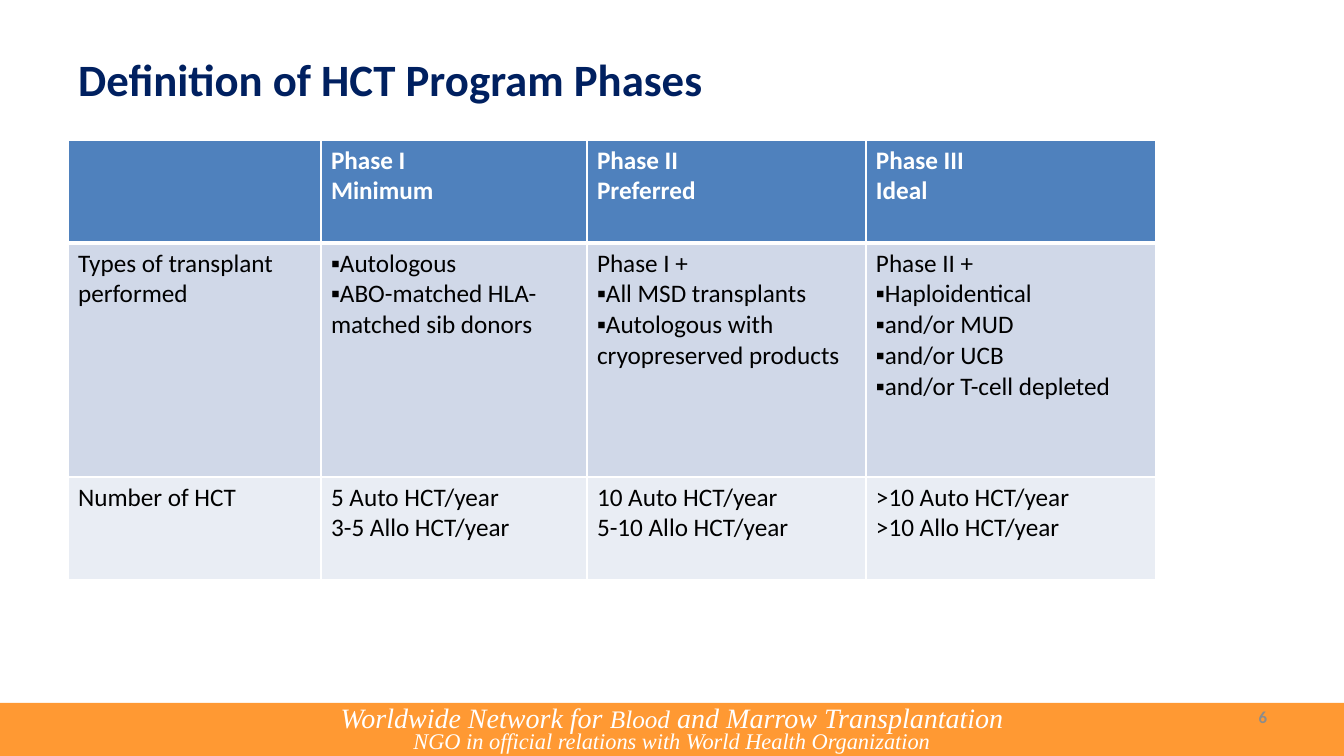
from lxml import etree
from pptx import Presentation
from pptx.dml.color import RGBColor
from pptx.enum.shapes import MSO_SHAPE
from pptx.enum.text import MSO_ANCHOR, PP_ALIGN
from pptx.oxml.ns import qn
from pptx.util import Pt

EMU_PER_PX = 914400 / 100.8
RECTANGLE = MSO_SHAPE.RECTANGLE
TOP, MIDDLE = MSO_ANCHOR.TOP, MSO_ANCHOR.MIDDLE
LEFT, CENTER, RIGHT = PP_ALIGN.LEFT, PP_ALIGN.CENTER, PP_ALIGN.RIGHT

WHITE = RGBColor(0xFF, 0xFF, 0xFF)
BLACK = RGBColor(0x00, 0x00, 0x00)
NAVY = RGBColor(0x00, 0x20, 0x60)
ORANGE = RGBColor(0xFF, 0x99, 0x33)
GRAY = RGBColor(0x8C, 0x8C, 0x8C)
HEADER_BLUE = RGBColor(0x4F, 0x81, 0xBD)
PALE_BLUE = RGBColor(0xD0, 0xD8, 0xE8)
LIGHT_BLUE = RGBColor(0xE9, 0xED, 0xF4)

SANS = "Calibri"
SERIF = "Times New Roman"

COLUMN_WIDTHS = [253, 266, 279, 290]
ROW_HEIGHTS = [103, 234, 103]
ROW_FILLS = [HEADER_BLUE, PALE_BLUE, LIGHT_BLUE]
PHASES = [
    [
        [],
        ["Phase I", "Minimum"],
        ["Phase II", "Preferred"],
        ["Phase III", "Ideal"],
    ],
    [
        ["Types of transplant performed"],
        ["▪Autologous", "▪ABO-matched HLA-matched sib donors"],
        ["Phase I +", "▪All MSD transplants", "▪Autologous with cryopreserved products"],
        ["Phase II +", "▪Haploidentical", "▪and/or MUD", "▪and/or UCB", "▪and/or T-cell depleted"],
    ],
    [
        ["Number of HCT"],
        ["5 Auto HCT/year", "3-5 Allo HCT/year"],
        ["10 Auto HCT/year", "5-10 Allo HCT/year"],
        [">10 Auto HCT/year", ">10 Allo HCT/year"],
    ],
]
FOOTER_LINES = [
    [("Worldwide Network for ", 20), ("Blood", 18), (" and Marrow Transplantation", 20)],
    [("NGO in official relations with World Health Organization", 16)],
]


def px(length):
    return round(length * EMU_PER_PX)


def add_span(para, text, size, color, font=SANS, bold=False, italic=False):
    span = para.add_run()
    span.text = text
    span.font.size = Pt(size)
    span.font.name = font
    span.font.bold = bold
    span.font.italic = italic
    span.font.color.rgb = color


def next_para(frame, index):
    return frame.add_paragraph() if index else frame.paragraphs[0]


def add_footer(page, left, top, width, height):
    band = page.shapes.add_shape(RECTANGLE, px(left), px(top), px(width), px(height))
    band.shadow.inherit = False
    band.fill.solid()
    band.fill.fore_color.rgb = ORANGE
    band.line.fill.background()
    frame = band.text_frame
    frame.word_wrap = True
    frame.vertical_anchor = TOP
    for index, line in enumerate(FOOTER_LINES):
        para = next_para(frame, index)
        para.alignment = CENTER
        para.line_spacing = 0.75
        for text, size in line:
            add_span(para, text, size, WHITE, SERIF, italic=True)


def add_page_number(page, left, top, width, height):
    box = page.shapes.add_textbox(px(left), px(top), px(width), px(height))
    frame = box.text_frame
    frame.word_wrap = True
    frame.vertical_anchor = MIDDLE
    para = frame.paragraphs[0]
    para.alignment = RIGHT
    add_span(para, "6", 12, GRAY, bold=True)


def add_title(page, left, top, width, height):
    title = page.shapes.title
    title.left, title.top = px(left), px(top)
    title.width, title.height = px(width), px(height)
    frame = title.text_frame
    frame.word_wrap = True
    frame.vertical_anchor = TOP
    para = frame.paragraphs[0]
    para.alignment = LEFT
    para.line_spacing = Pt(40)
    add_span(para, "Definition of HCT Program Phases", 32, NAVY, bold=True)


def set_borders(cell, top_width, bottom_width):
    properties = cell._tc.get_or_add_tcPr()
    for tag, width in (("lnL", 1), ("lnR", 1), ("lnT", top_width), ("lnB", bottom_width)):
        line = etree.SubElement(properties, qn(f"a:{tag}"), w=str(Pt(width)))
        fill = etree.SubElement(line, qn("a:solidFill"))
        etree.SubElement(fill, qn("a:srgbClr"), val=str(WHITE))


def add_phase_table(page, left, top, width, height):
    table = page.shapes.add_table(
        len(ROW_HEIGHTS), len(COLUMN_WIDTHS), px(left), px(top), px(width), px(height)
    ).table
    table.horz_banding = False
    for column, column_width in zip(table.columns, COLUMN_WIDTHS):
        column.width = px(column_width)
    for row_index, (row, row_height) in enumerate(zip(table.rows, ROW_HEIGHTS)):
        row.height = px(row_height)
        is_header = row_index == 0
        for cell, lines in zip(row.cells, PHASES[row_index]):
            set_borders(cell, 3 if row_index == 1 else 1, 3 if is_header else 1)
            cell.fill.solid()
            cell.fill.fore_color.rgb = ROW_FILLS[row_index]
            for index, text in enumerate(lines):
                para = next_para(cell.text_frame, index)
                add_span(para, text, 18, WHITE if is_header else BLACK, bold=is_header)


def main():
    deck = Presentation()
    deck.slide_width, deck.slide_height = px(1344), px(756)
    page = deck.slides.add_slide(deck.slide_layouts[5])
    add_footer(page, 0, 703, 1344, 56)
    add_page_number(page, 1177, 697, 100, 40)
    add_phase_table(page, 68, 140, sum(COLUMN_WIDTHS), sum(ROW_HEIGHTS))
    add_title(page, 68, 44, 942, 116)
    deck.save("out.pptx")


if __name__ == "__main__":
    main()
